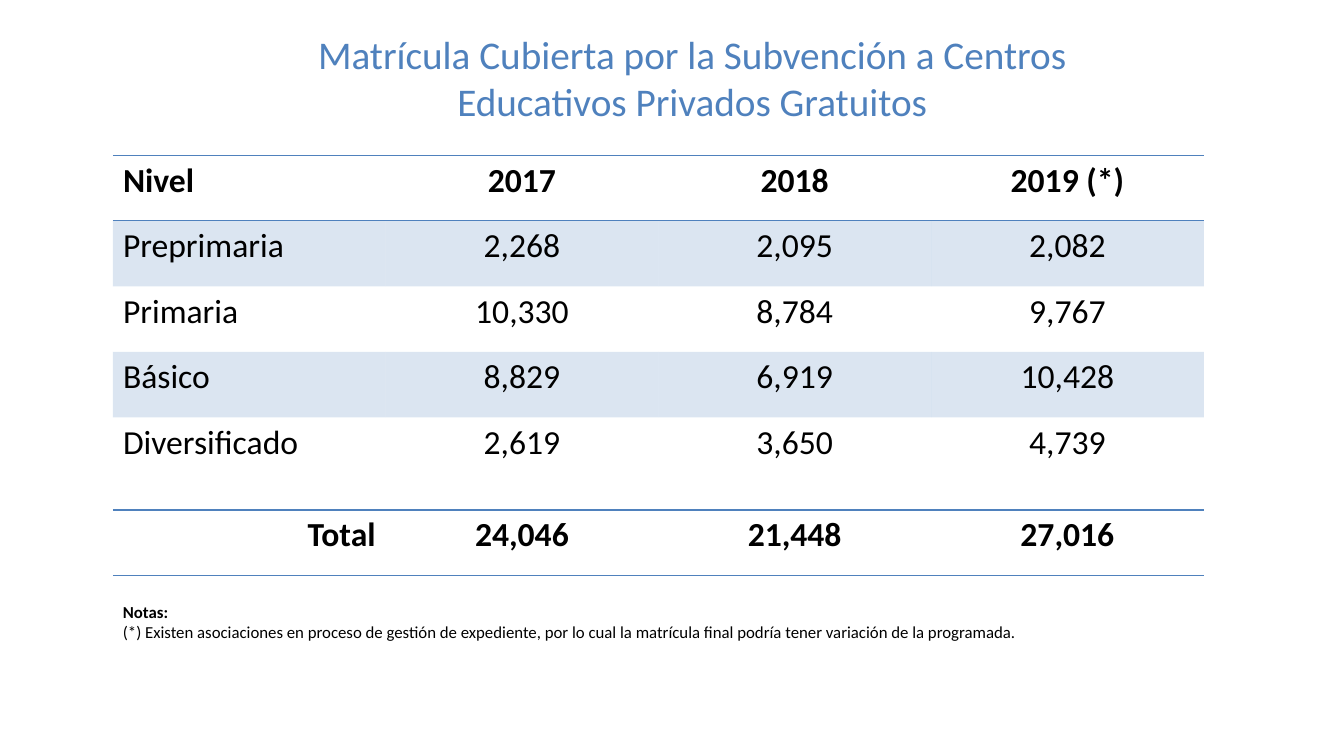
from pptx import Presentation, util as u
from pptx.dml.color import RGBColor
from pptx.enum import text
from pptx.oxml import parse_xml
from pptx.oxml.ns import nsdecls, qn

theme = dict(font="Calibri", blue="4F81BD", black="000000",
             title=28, cell=24, note=12, band=20)
LEFT, MID, RIGHT = text.PP_ALIGN.LEFT, text.PP_ALIGN.CENTER, text.PP_ALIGN.RIGHT


def style(para, size, color, align, bold=False):
    para.alignment = align
    for run in para.runs:
        font = run.font
        font.name, font.size, font.bold = theme["font"], u.Pt(size), bold
        font.color.rgb = RGBColor.from_string(color)


def rule(cell):
    """Draw the top and bottom lines of a cell."""
    props = cell._tc.get_or_add_tcPr()
    for i, side in enumerate(("lnT", "lnB")):
        props.insert(i, parse_xml(
            f'<a:{side} {nsdecls("a")} w="12700"><a:solidFill>'
            f'<a:srgbClr val="{theme["blue"]}"/></a:solidFill></a:{side}>'))


deck = Presentation()
deck.slide_width, deck.slide_height = u.Inches(13.33), u.Inches(7.5)
slide = deck.slides.add_slide(deck.slide_layouts[5])
edge = u.Inches(1.12)

# Title
title = slide.shapes.title
title.left, title.top = u.Inches(2.97), u.Inches(0.18)
title.width, title.height = u.Inches(7.79), u.Inches(1.18)
frame = title.text_frame
frame.text = "Matrícula Cubierta por la Subvención a Centros Educativos Privados Gratuitos"
frame.vertical_anchor = text.MSO_ANCHOR.MIDDLE
style(frame.paragraphs[0], theme["title"], theme["blue"], MID)

# Notes
box = slide.shapes.add_textbox(edge, u.Inches(5.92), u.Inches(10.56), u.Inches(0.5))
frame = box.text_frame
frame.word_wrap = True
frame.text = ("Notas:\n(*) Existen asociaciones en proceso de gestión de expediente, "
              "por lo cual la matrícula final podría tener variación de la programada.")
for i, para in enumerate(frame.paragraphs):
    style(para, theme["note"], theme["black"], text.PP_ALIGN.JUSTIFY, i == 0)

# Enrolment table
data = [
    ("Nivel", "2017", "2018", "2019 (*)"),
    ("Preprimaria", "2,268", "2,095", "2,082"),
    ("Primaria", "10,330", "8,784", "9,767"),
    ("Básico", "8,829", "6,919", "10,428"),
    ("Diversificado", "2,619", "3,650", "4,739"),
    ("Total", "24,046", "21,448", "27,016"),
]
last = len(data) - 1
grid = slide.shapes.add_table(len(data), len(data[0]), edge, u.Inches(1.54),
                              u.Inches(10.82), u.Inches(4.17)).table
grid.horz_banding = False
# Plain table style: no fill, no grid
grid._tbl.tblPr.find(qn("a:tableStyleId")).text = "{2D5ABB26-0587-4C30-8999-92F81FD0307C}"

for r, row in enumerate(data):
    grid.rows[r].height = u.Inches(0.92 if r == last - 1 else 0.65)
    strong = r in (0, last)
    for c, word in enumerate(row):
        cell = grid.cell(r, c)
        cell.text = word
        align = MID if c else RIGHT if r == last else LEFT
        style(cell.text_frame.paragraphs[0], theme["cell"], theme["black"], align, strong)
        # Tinted bands on odd body rows
        if r % 2 and not strong:
            cell.fill.solid()
            cell.fill.fore_color.rgb = RGBColor.from_string(theme["blue"])
            tint = cell._tc.tcPr.find(".//" + qn("a:srgbClr"))
            tint.append(parse_xml(f'<a:alpha {nsdecls("a")} val="{theme["band"] * 1000}"/>'))
        else:
            cell.fill.background()
        if strong:
            rule(cell)

deck.save("out.pptx")
